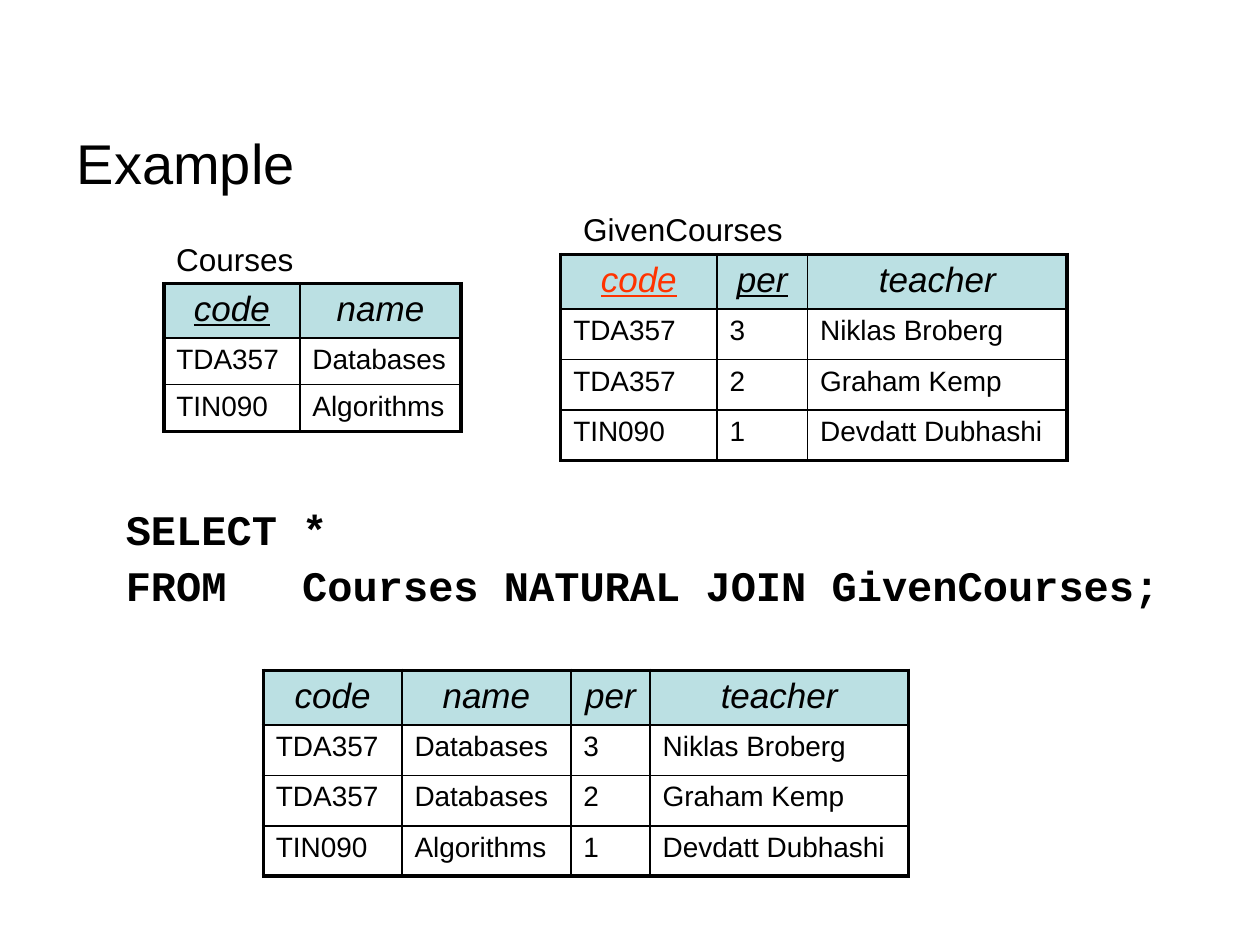
from lxml import etree
from pptx import Presentation
from pptx.dml.color import RGBColor
from pptx.enum.text import MSO_ANCHOR, MSO_AUTO_SIZE, PP_ALIGN
from pptx.oxml.ns import qn
from pptx.util import Inches, Pt

LEFT, CENTER = PP_ALIGN.LEFT, PP_ALIGN.CENTER
TOP = MSO_ANCHOR.TOP
NO_AUTOFIT = MSO_AUTO_SIZE.NONE
TITLE_ONLY = 5

BLACK = RGBColor(0x00, 0x00, 0x00)
WHITE = RGBColor(0xFF, 0xFF, 0xFF)
RED = RGBColor(0xFF, 0x33, 0x00)
HEADER_BLUE = RGBColor(0xBB, 0xE0, 0xE3)

OUTER_LINE, INNER_LINE = Pt(2.25), Pt(1)
HEADER_HEIGHT = 0.43

HEADING = "Example"
QUERY = "SELECT *\vFROM   Courses NATURAL JOIN GivenCourses;"
CAPTIONS = [
    ("Courses", 1.3, 1.86),
    ("GivenCourses", 4.53, 1.62),
]
RELATIONS = [
    {
        "at": (4.45, 2.02),
        "columns": [("code", 1.24), ("per", 0.72), ("teacher", 2.06)],
        "keys": {"code": RED, "per": BLACK},
        "row_height": 0.4,
        "rows": [
            ("TDA357", "3", "Niklas Broberg"),
            ("TDA357", "2", "Graham Kemp"),
            ("TIN090", "1", "Devdatt Dubhashi"),
        ],
    },
    {
        "at": (1.3, 2.25),
        "columns": [("code", 1.08), ("name", 1.28)],
        "keys": {"code": BLACK},
        "row_height": 0.37,
        "rows": [("TDA357", "Databases"), ("TIN090", "Algorithms")],
    },
    {
        "at": (2.09, 5.32),
        "columns": [("code", 1.1), ("name", 1.34), ("per", 0.63), ("teacher", 2.05)],
        "keys": {},
        "row_height": 0.4,
        "rows": [
            ("TDA357", "Databases", "3", "Niklas Broberg"),
            ("TDA357", "Databases", "2", "Graham Kemp"),
            ("TIN090", "Algorithms", "1", "Devdatt Dubhashi"),
        ],
    },
]


def style(paragraph, size, name="Arial", color=BLACK):
    font = paragraph.font
    font.name, font.size = name, Pt(size)
    font.color.rgb = color
    return font


def add_text(slide, text, left, top, width, height):
    frame = slide.shapes.add_textbox(
        Inches(left), Inches(top), Inches(width), Inches(height)).text_frame
    frame.word_wrap = True
    frame.text = text
    return frame.paragraphs[0]


def set_borders(cell, widths):
    properties = cell._tc.get_or_add_tcPr()
    for position, (side, width) in enumerate(widths.items()):
        line = etree.Element(qn(f"a:{side}"), w=str(width))
        fill = etree.SubElement(line, qn("a:solidFill"))
        etree.SubElement(fill, qn("a:srgbClr"), val=str(BLACK))
        properties.insert(position, line)


def add_relation(slide, relation):
    names, widths = zip(*relation["columns"])
    records = [names, *relation["rows"]]
    heights = [HEADER_HEIGHT] + [relation["row_height"]] * len(relation["rows"])
    left, top = relation["at"]
    table = slide.shapes.add_table(
        len(records), len(names), Inches(left), Inches(top),
        Inches(sum(widths)), Inches(sum(heights))).table
    for column, width in zip(table.columns, widths):
        column.width = Inches(width)
    for row, height in zip(table.rows, heights):
        row.height = Inches(height)

    last_row, last_column = len(records) - 1, len(names) - 1
    for r, record in enumerate(records):
        for c, value in enumerate(record):
            cell = table.cell(r, c)
            cell.text = value
            is_header = r == 0
            cell.fill.solid()
            cell.fill.fore_color.rgb = HEADER_BLUE if is_header else WHITE
            paragraph = cell.text_frame.paragraphs[0]
            paragraph.alignment = CENTER if is_header else LEFT
            if is_header:
                font = style(paragraph, 20, color=relation["keys"].get(value, BLACK))
                font.bold, font.italic = False, True
                font.underline = value in relation["keys"]
            else:
                style(paragraph, 16)
            edges = {"lnL": c == 0, "lnR": c == last_column,
                     "lnT": r == 0, "lnB": r == last_row}
            set_borders(cell, {side: OUTER_LINE if outer else INNER_LINE
                               for side, outer in edges.items()})


def main():
    presentation = Presentation()
    presentation.slide_width, presentation.slide_height = Inches(10), Inches(7.5)
    slide = presentation.slides.add_slide(presentation.slide_layouts[TITLE_ONLY])

    title = slide.shapes.title
    title.left, title.top = Inches(0.51), Inches(0.91)
    title.width, title.height = Inches(9), Inches(0.87)
    frame = title.text_frame
    frame.text = HEADING
    frame.auto_size = NO_AUTOFIT
    frame.vertical_anchor = TOP
    frame.margin_top = Inches(0.11)
    frame.paragraphs[0].alignment = LEFT
    style(frame.paragraphs[0], 32)

    query = add_text(slide, QUERY, 0.9, 3.91, 8.43, 0.9)
    query.line_spacing = 1.1
    style(query, 24, "Courier New").bold = True

    for relation in RELATIONS:
        add_relation(slide, relation)
    for caption, left, top in CAPTIONS:
        style(add_text(slide, caption, left, top, 2.36, 0.4), 18)

    presentation.save("out.pptx")


if __name__ == "__main__":
    main()
